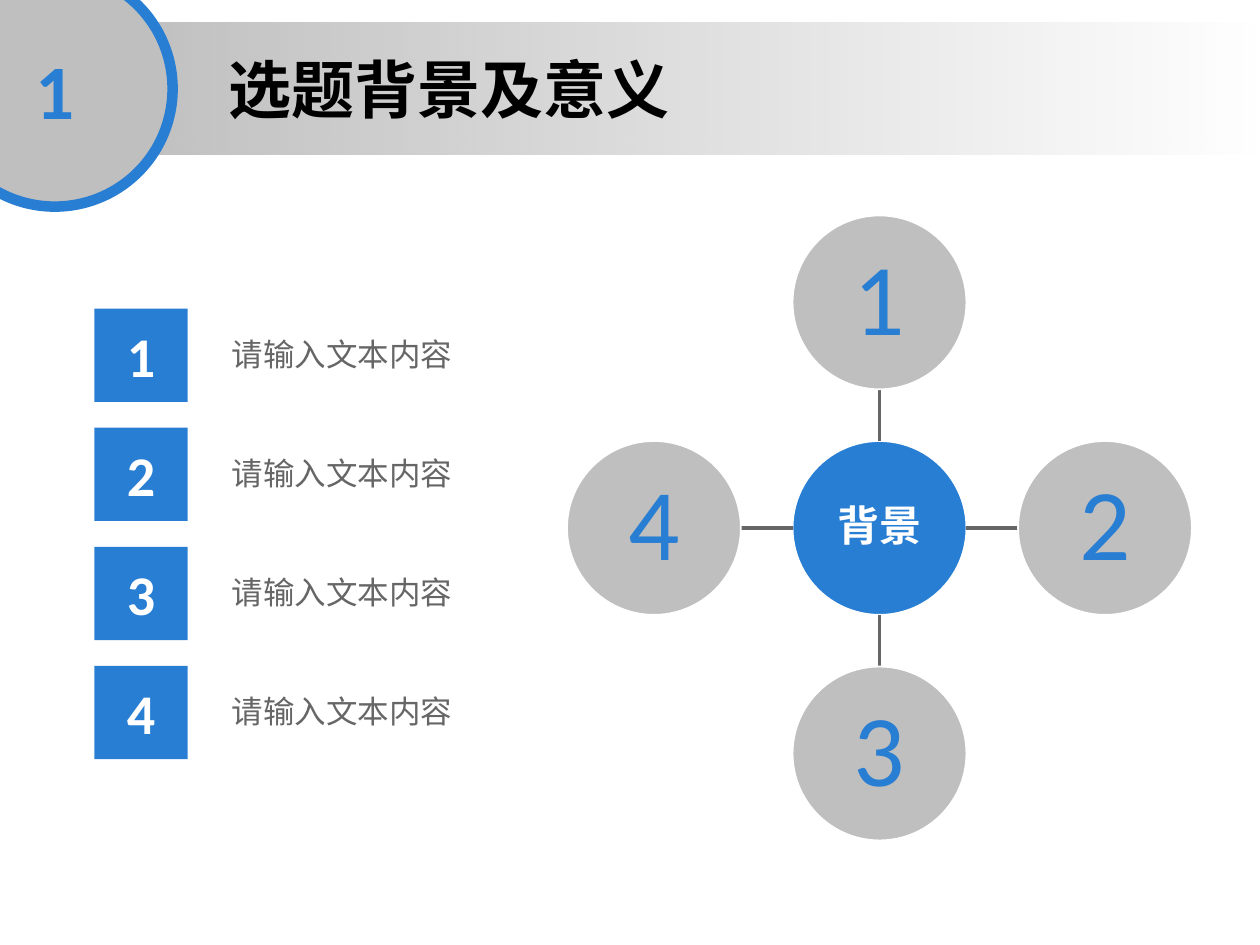
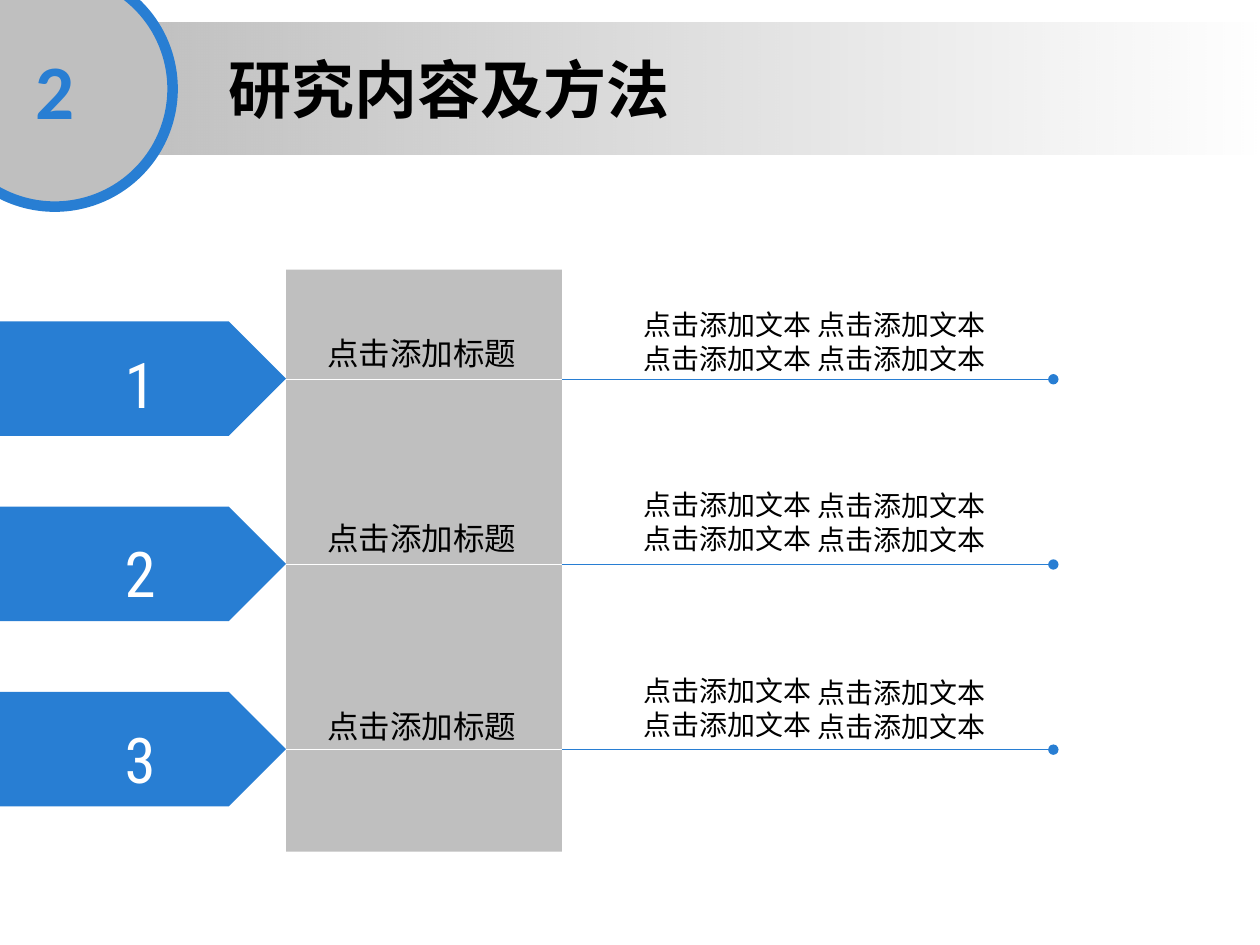
from dataclasses import dataclass

from lxml import etree
from pptx import Presentation
from pptx.dml.color import RGBColor
from pptx.enum.shapes import MSO_CONNECTOR, MSO_SHAPE
from pptx.enum.text import MSO_ANCHOR, MSO_AUTO_SIZE, PP_ALIGN
from pptx.oxml.ns import qn
from pptx.util import Inches, Pt

RECTANGLE, OVAL, PENTAGON = MSO_SHAPE.RECTANGLE, MSO_SHAPE.OVAL, MSO_SHAPE.PENTAGON
STRAIGHT = MSO_CONNECTOR.STRAIGHT
TOP, MIDDLE = MSO_ANCHOR.TOP, MSO_ANCHOR.MIDDLE
LEFT, CENTER = PP_ALIGN.LEFT, PP_ALIGN.CENTER
GROW = MSO_AUTO_SIZE.SHAPE_TO_FIT_TEXT
TITLE_ONLY = 5


@dataclass(frozen=True)
class TextStyle:
    font: str
    size: float
    color: str
    bold: bool = False


class Theme:
    blue, silver, gray = "287ED3", "BFBFBF", "666666"
    white, black = "FFFFFF", "000000"
    digits, chinese = "Calibri", "Noto Sans CJK SC"

    title = TextStyle(chinese, 36, black, True)
    section = TextStyle(digits, 44, blue, True)
    hub = TextStyle(chinese, 24, white, True)
    satellite = TextStyle(digits, 58, blue)
    marker = TextStyle(digits, 32, white, True)
    item = TextStyle(chinese, 18, gray)
    heading = TextStyle("DejaVu Sans", 18, black)
    arrow = TextStyle("Roboto Condensed", 36, white)
    detail = TextStyle(chinese, 16, black)


# Formatting helpers

def apply_format(target, values):
    for name, value in values.items():
        setattr(target, name, value)


def write(frame, text, style, frame_format, para_format):
    apply_format(frame, frame_format)
    para = frame.paragraphs[0]
    apply_format(para, para_format)
    span = para.add_run()
    span.text = text
    apply_format(span.font, {"name": style.font, "size": Pt(style.size), "bold": style.bold})
    span.font.color.rgb = RGBColor.from_string(style.color)
    east_asian = etree.SubElement(span.font._element, qn("a:ea"))
    east_asian.set("typeface", style.font)


def set_line(shape, color, width):
    shape.line.color.rgb = RGBColor.from_string(color)
    shape.line.width = Pt(width)


# Element builders

def add_block(page, kind, left, top, width, height, fill=None, outline=None):
    block = page.shapes.add_shape(kind, Inches(left), Inches(top), Inches(width), Inches(height))
    block.shadow.inherit = False
    if fill:
        block.fill.solid()
        block.fill.fore_color.rgb = RGBColor.from_string(fill)
    if outline:
        set_line(block, *outline)
    else:
        block.line.fill.background()
    return block


def add_label(block, text, style, line_spacing=None, inset=None):
    frame_format = {"vertical_anchor": MIDDLE, "word_wrap": True}
    if inset is not None:
        sides = ("margin_left", "margin_top", "margin_right", "margin_bottom")
        frame_format.update(dict.fromkeys(sides, Inches(inset)))
    write(block.text_frame, text, style, frame_format,
          {"alignment": CENTER, "line_spacing": line_spacing})


def add_text(page, text, style, left, top, width, height, wrap=False):
    box = page.shapes.add_textbox(Inches(left), Inches(top), Inches(width), Inches(height))
    write(box.text_frame, text, style, {"word_wrap": wrap, "auto_size": GROW},
          {"alignment": LEFT})


def add_line(page, start, end, color, width, dot=False):
    line = page.shapes.add_connector(STRAIGHT, *(Inches(value) for value in (*start, *end)))
    set_line(line, color, width)
    properties = line.element.spPr
    if dot:
        etree.SubElement(properties.find(qn("a:ln")), qn("a:tailEnd")).set("type", "oval")
    etree.SubElement(properties, qn("a:effectLst"))


def add_fading_band(page):
    band = add_block(page, RECTANGLE, 0.86, 0.18, 9.14, 1.05)
    band.fill.gradient()
    band.fill.gradient_angle = 0
    for stop, position in zip(band.fill.gradient_stops, (0, 1)):
        stop.color.rgb = RGBColor.from_string(Theme.silver)
        stop.position = position
    end_color = list(band.element.spPr.iter(qn("a:srgbClr")))[-1]
    etree.SubElement(end_color, qn("a:alpha")).set("val", "0")


def add_page(deck, number, title):
    page = deck.slides.add_slide(deck.slide_layouts[TITLE_ONLY])
    add_fading_band(page)
    badge = add_block(page, OVAL, -0.5, -0.23, 1.87, 1.87, Theme.silver, (Theme.blue, 6))
    add_label(badge, str(number), Theme.section)

    # The title comes in front of the band
    box = page.shapes.title
    box.element.getparent().append(box.element)
    apply_format(box, {"left": Inches(1.71), "top": Inches(0.35),
                       "width": Inches(6.19), "height": Inches(0.71)})
    write(box.text_frame, title, Theme.title,
          {"vertical_anchor": TOP, "word_wrap": True, "auto_size": GROW}, {"alignment": LEFT})
    return page


# Slide content

def add_hub_diagram(page):
    center_x, center_y, radius, reach = 6.98, 4.19, 0.69, 1.79

    def add_circle(x, y, text, fill, style):
        circle = add_block(page, OVAL, x - radius, y - radius, 2 * radius, 2 * radius,
                           fill, (Theme.white, 1))
        add_label(circle, text, style, line_spacing=0.9, inset=0.04)

    add_circle(center_x, center_y, "背景", Theme.blue, Theme.hub)
    directions = [(0, -1), (1, 0), (0, 1), (-1, 0)]
    for number, (dx, dy) in enumerate(directions, 1):
        start, end = ((center_x + dx * distance, center_y + dy * distance)
                      for distance in (radius, reach - radius))
        add_line(page, start, end, Theme.gray, 2.25)
        add_circle(center_x + dx * reach, center_y + dy * reach, str(number),
                   Theme.silver, Theme.satellite)


def add_numbered_items(page, items):
    for index, text in enumerate(items):
        top = 2.45 + index * 0.945
        square = add_block(page, RECTANGLE, 0.75, top, 0.74, 0.74, Theme.blue)
        add_label(square, str(index + 1), Theme.marker)
        add_text(page, text, Theme.item, 1.74, top + 0.16, 2.76, 0.4, wrap=True)


def add_method_row(page, number, axis, number_top, heading_top, detail_tops):
    column_left, column_right, line_end = 2.27, 4.46, 8.36
    add_line(page, (column_left, axis), (column_right, axis), Theme.white, 0.5)
    add_text(page, "点击添加标题", Theme.heading, 2.5, heading_top, 1.72, 0.4)
    add_block(page, PENTAGON, 0, axis - 0.46, column_left, 0.91, Theme.blue)
    number_width = 0.39 if number == 1 else 0.46
    add_text(page, str(number), Theme.arrow, 0.89, number_top, number_width, 0.71)
    add_line(page, (column_right, axis), (line_end, axis), Theme.blue, 0.5, dot=True)
    for left, first_top in zip((5.01, 6.39), detail_tops):
        for top in (first_top, first_top + 0.27):
            add_text(page, "点击添加文本", Theme.detail, left, top, 1.55, 0.37)


def main():
    deck = Presentation()
    apply_format(deck, {"slide_width": Inches(10), "slide_height": Inches(7.5)})

    # Background and significance
    page = add_page(deck, 1, "选题背景及意义")
    add_hub_diagram(page)
    add_numbered_items(page, ["请输入文本内容"] * 4)

    # Content and methods: tops of number, heading and two detail columns
    page = add_page(deck, 2, "研究内容及方法")
    add_block(page, RECTANGLE, 2.27, 2.14, 2.19, 4.62, Theme.silver)
    row_tops = [
        (2.69, 2.6, (2.39, 2.39)),
        (4.19, 4.07, (3.82, 3.83)),
        (5.67, 5.56, (5.3, 5.31)),
    ]
    for index, tops in enumerate(row_tops):
        add_method_row(page, index + 1, 3.01 + index * 1.47, *tops)

    deck.save("out.pptx")


if __name__ == "__main__":
    main()
